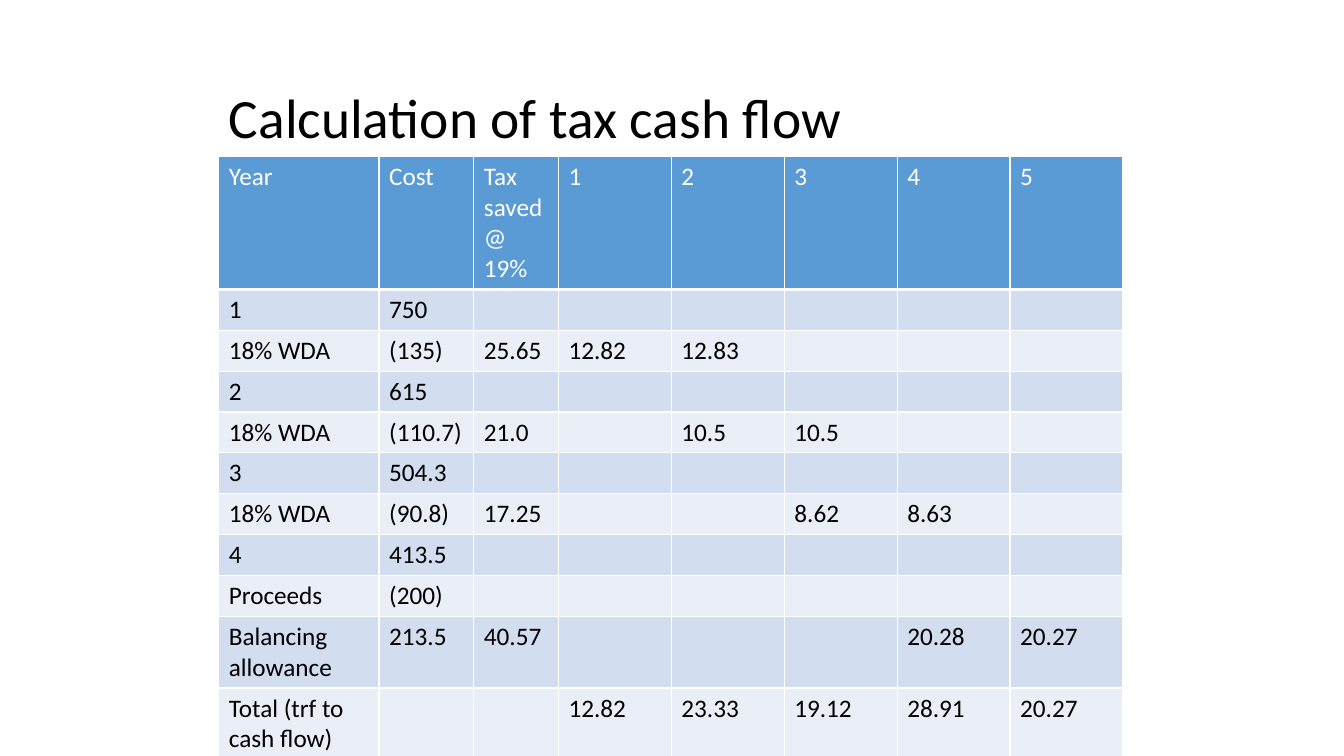
from lxml import etree
from pptx import Presentation
from pptx.dml.color import RGBColor
from pptx.enum.text import MSO_ANCHOR, PP_ALIGN
from pptx.oxml.ns import qn
from pptx.util import Inches, Pt

MIDDLE = MSO_ANCHOR.MIDDLE
LEFT = PP_ALIGN.LEFT
TITLE_ONLY = 5
COLORS = {"text": "000000", "white": "FFFFFF", "header": "5B9BD5",
          "odd": "D2DEEF", "even": "EAEFF7"}
COLUMN_WIDTHS = [1.59, 0.94, 0.84] + [1.12] * 5
ROW_HEIGHTS = [1.3] + [0.4] * 8 + [0.71] * 2
TAX_ROWS = [
    ["Year", "Cost", "Tax saved @ 19%", "1", "2", "3", "4", "5"],
    ["1", "750"],
    ["18% WDA", "(135)", "25.65", "12.82", "12.83"],
    ["2", "615"],
    ["18% WDA", "(110.7)", "21.0", "", "10.5", "10.5"],
    ["3", "504.3"],
    ["18% WDA", "(90.8)", "17.25", "", "", "8.62", "8.63"],
    ["4", "413.5"],
    ["Proceeds", "(200)"],
    ["Balancing allowance", "213.5", "40.57", "", "", "", "20.28", "20.27"],
    ["Total (trf to cash flow)", "", "", "12.82", "23.33", "19.12", "28.91", "20.27"],
]


class SlideBuilder:
    """Holds the text style and the current slide."""

    def __init__(self, deck, font="Calibri"):
        self.font = font
        self.slide = deck.slides.add_slide(deck.slide_layouts[TITLE_ONLY])

    def style(self, para, size, color):
        para.alignment = LEFT
        for span in para.runs:
            span.font.name = self.font
            span.font.size = Pt(size)
            span.font.bold = False
            span.font.color.rgb = RGBColor.from_string(COLORS[color])

    def title(self, text, left, top, width, height):
        box = self.slide.shapes.title
        box.left, box.top = Inches(left), Inches(top)
        box.width, box.height = Inches(width), Inches(height)
        frame = box.text_frame
        frame.text = text
        frame.word_wrap = True
        frame.vertical_anchor = MIDDLE
        frame.paragraphs[0].line_spacing = 0.9
        self.style(frame.paragraphs[0], 39.6, "text")

    def borders(self, cell, bottom_width):
        properties = cell._tc.get_or_add_tcPr()
        widths = {"a:lnL": 1, "a:lnR": 1, "a:lnT": 1, "a:lnB": bottom_width}
        for position, (tag, width) in enumerate(widths.items()):
            line = etree.Element(qn(tag), w=str(Pt(width)))
            fill = etree.SubElement(line, qn("a:solidFill"))
            etree.SubElement(fill, qn("a:srgbClr"), val=COLORS["white"])
            properties.insert(position, line)

    def table(self, rows, left, top, widths, heights):
        table = self.slide.shapes.add_table(
            len(heights), len(widths), Inches(left), Inches(top),
            Inches(sum(widths)), Inches(sum(heights))).table
        for column, width in zip(table.columns, widths):
            column.width = Inches(width)
        for number, (row, height) in enumerate(zip(table.rows, heights)):
            row.height = Inches(height)
            band = "header" if number == 0 else ("even", "odd")[number % 2]
            for index, cell in enumerate(row.cells):
                cell.fill.solid()
                cell.fill.fore_color.rgb = RGBColor.from_string(COLORS[band])
                self.borders(cell, 3 if number == 0 else 1)
                if index < len(rows[number]) and rows[number][index]:
                    cell.text_frame.text = rows[number][index]
                    self.style(cell.text_frame.paragraphs[0], 18,
                               "white" if number == 0 else "text")


def main():
    deck = Presentation()
    deck.slide_width, deck.slide_height = Inches(13.33), Inches(7.5)
    page = SlideBuilder(deck)
    page.title("Calculation of tax cash flow", 2.17, 0.84, 9, 0.71)
    page.table(TAX_ROWS, 2.17, 1.55, COLUMN_WIDTHS, ROW_HEIGHTS)
    deck.save("out.pptx")


if __name__ == "__main__":
    main()
